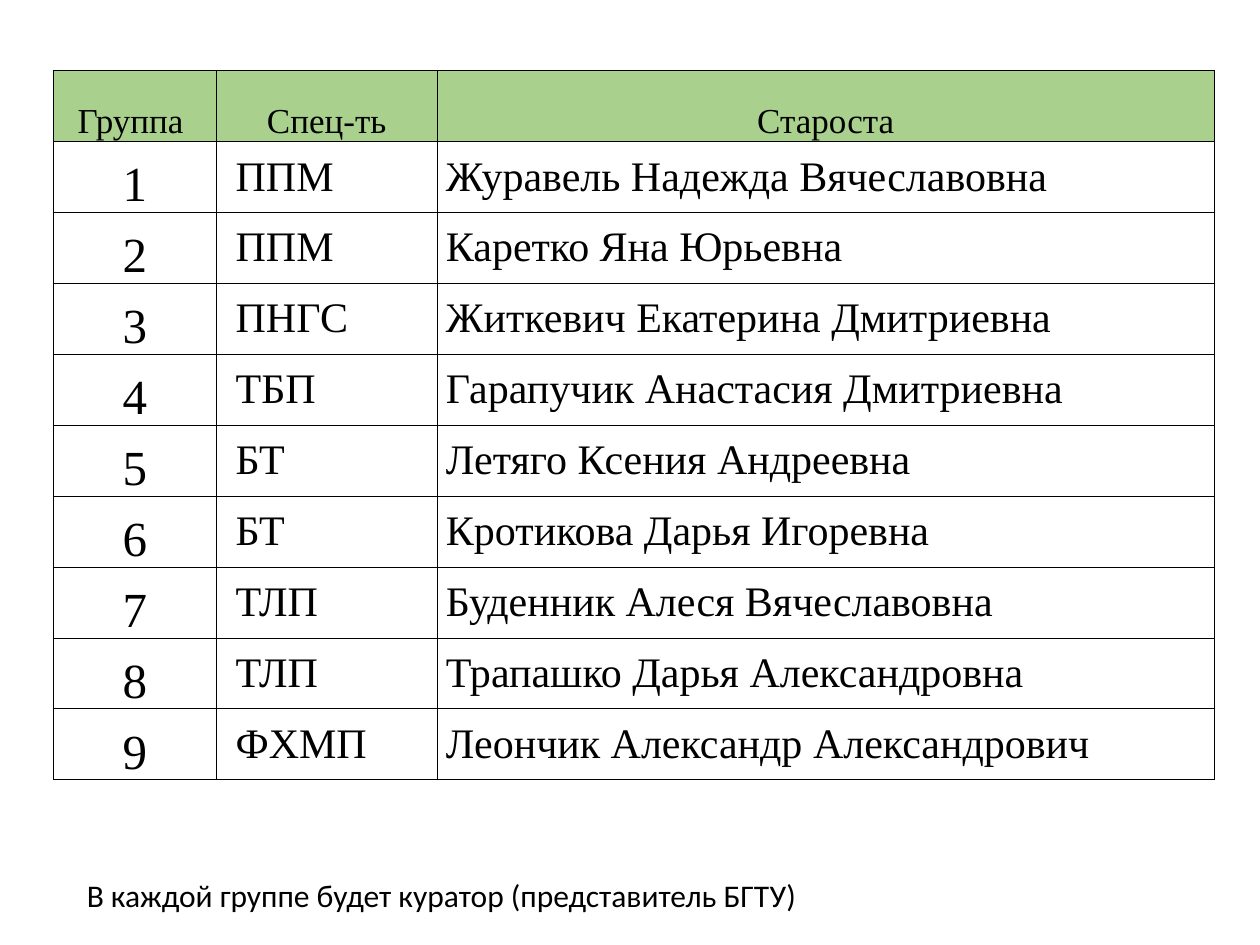
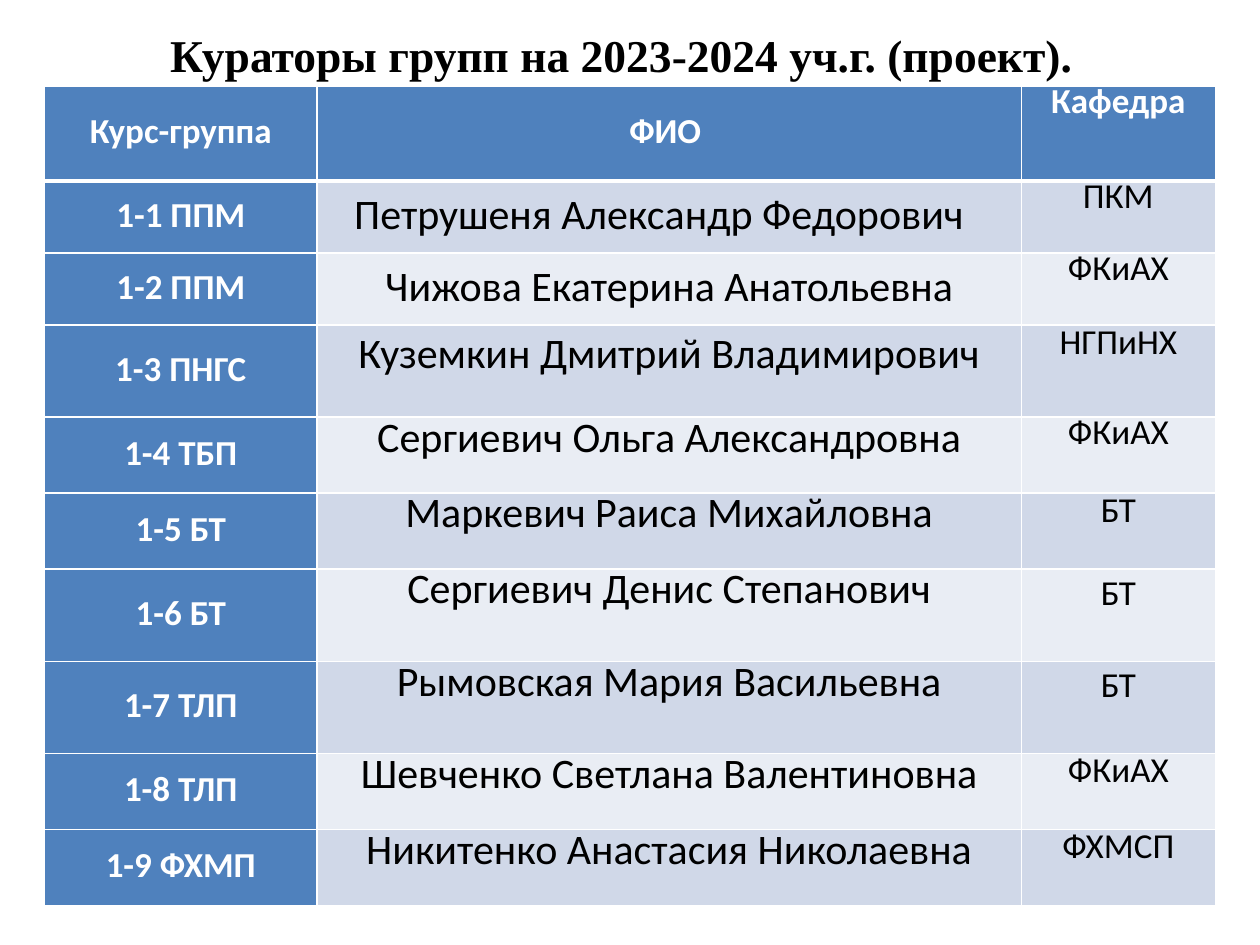
import pptx
import pptx.dml.color
import pptx.enum.text
import pptx.oxml
import pptx.oxml.ns
import pptx.util

Cm = pptx.util.Cm
Pt = pptx.util.Pt
ALIGN = pptx.enum.text.PP_ALIGN
ANCHOR = pptx.enum.text.MSO_ANCHOR

COLORS = {
    "black": "000000",
    "white": "FFFFFF",
    "green": "A9D18D",
    "blue": "4F81BD",
    "band_dark": "D0D8E8",
    "band_light": "E9EDF4",
}
SERIF, SANS = "Times New Roman", "Calibri"


def write(tf, text, size, font, color="black", bold=False, align=ALIGN.LEFT, spacing=None):
    tf.word_wrap = True
    p = tf.paragraphs[0]
    p.text = text
    p.alignment = align
    if spacing:
        p.line_spacing = spacing
    r = p.runs[0]
    r.font.size = Pt(size)
    r.font.name = font
    r.font.bold = bold
    r.font.color.rgb = pptx.dml.color.RGBColor.from_string(COLORS[color])


def style_cell(cell, anchor, margins, fill, line, widths):
    cell.vertical_anchor = anchor
    cell.margin_left, cell.margin_top, cell.margin_right, cell.margin_bottom = map(Cm, margins)
    tcPr = cell._tc.get_or_add_tcPr()
    # Borders come before the fill in the cell properties
    for side, width in zip("LRTB", widths):
        tcPr.append(pptx.oxml.parse_xml(
            f'<a:ln{side} {pptx.oxml.ns.nsdecls("a")} w="{Pt(width)}"><a:solidFill>'
            f'<a:srgbClr val="{COLORS[line]}"/></a:solidFill></a:ln{side}>'))
    if fill:
        cell.fill.solid()
        cell.fill.fore_color.rgb = pptx.dml.color.RGBColor.from_string(COLORS[fill])
    else:
        cell.fill.background()


prs = pptx.Presentation()
prs.slide_width, prs.slide_height = Cm(25.4), Cm(19.05)
blank = prs.slide_layouts[6]

# Group leaders
leaders = [
    ("ППМ", "Журавель Надежда Вячеславовна"),
    ("ППМ", "Каретко Яна Юрьевна"),
    ("ПНГС", "Житкевич Екатерина Дмитриевна"),
    ("ТБП", "Гарапучик Анастасия Дмитриевна"),
    ("БТ", "Летяго Ксения Андреевна"),
    ("БТ", "Кротикова Дарья Игоревна"),
    ("ТЛП", "Буденник Алеся Вячеславовна"),
    ("ТЛП", "Трапашко Дарья Александровна"),
    ("ФХМП", "Леончик Александр Александрович"),
]
rows = [("Группа ", "Спец-ть", "Староста")]
rows += [(str(n), *leader) for n, leader in enumerate(leaders, 1)]

s = prs.slides.add_slide(blank)
table = s.shapes.add_table(len(rows), 3, Cm(1.08), Cm(1.42), Cm(23.4), Cm(14.3)).table
table.first_row = table.horz_banding = False
for column, width in zip(table.columns, (3.28, 4.45, 15.67)):
    column.width = Cm(width)
for i, row in enumerate(rows):
    table.rows[i].height = Cm(1.43)
    for j, text in enumerate(row):
        cell = table.cell(i, j)
        if i == 0 or j == 0:
            anchor, margins, align = ANCHOR.BOTTOM, (0.02, 0.02, 0.02, 0), ALIGN.CENTER
            size = 20 if i == 0 else 28
        else:
            left = 0.39 if j == 1 else 0.18
            anchor, margins, align = ANCHOR.MIDDLE, (left, 0, 0.18, 0), ALIGN.LEFT
            size = 24
        style_cell(cell, anchor, margins, "green" if i == 0 else None, "black", [0.5] * 4)
        write(cell.text_frame, text, size, SERIF, align=align)

# Note under the table
sp = s.shapes.add_textbox(Cm(1.5), Cm(17.53), Cm(22.99), Cm(1.02))
write(sp.text_frame, "В каждой группе будет куратор (представитель БГТУ)", 18, SANS)

# Curators: group, name, department, row height, line spacing of name and department
curators = [
    ("Курс-группа", "ФИО ", "Кафедра", 1.92, 0.8, 0.8),
    ("1-1 ППМ", "Петрушеня Александр Федорович\t", "ПКМ", 1.45, 0.8, 0.8),
    ("1-2 ППМ", "Чижова Екатерина Анатольевна", "ФКиАХ", 1.45, 0.8, 0.8),
    ("1-3 ПНГС", "Куземкин Дмитрий Владимирович", "НГПиНХ", 1.86, 1.07, 0.85),
    ("1-4 ТБП", "Сергиевич Ольга Александровна", "ФКиАХ", 1.53, 0.85, 0.8),
    ("1-5 БТ", "Маркевич Раиса Михайловна", "БТ", 1.53, 0.85, 0.85),
    ("1-6 БТ", "Сергиевич Денис Степанович", "БТ", 1.86, 0.85, 1.07),
    ("1-7 ТЛП", "Рымовская Мария Васильевна", "БТ", 1.86, 0.85, 1.07),
    ("1-8 ТЛП", "Шевченко Светлана Валентиновна", "ФКиАХ", 1.53, 0.85, 0.85),
    ("1-9 ФХМП", "Никитенко Анастасия Николаевна", "ФХМСП", 1.53, 0.85, 0.85),
]
s = prs.slides.add_slide(blank)
table = s.shapes.add_table(len(curators), 3, Cm(0.9), Cm(1.73), Cm(23.6), Cm(16.52)).table
for column, width in zip(table.columns, (5.49, 14.2, 3.91)):
    column.width = Cm(width)
for i, (group, name, department, height, name_gap, department_gap) in enumerate(curators):
    table.rows[i].height = Cm(height)
    band = "band_dark" if i % 2 else "band_light"
    widths = (1, 1, 3 if i == 1 else 1, 3 if i == 0 else 1)
    gaps = (0.8, name_gap, department_gap)
    for j, text in enumerate((group, name, department)):
        cell = table.cell(i, j)
        heading = i == 0 or j == 0
        middle = j == 0 or (j == 1 and i < 3)
        style_cell(cell, ANCHOR.MIDDLE if middle else ANCHOR.TOP, (0.18, 0, 0.18, 0),
                   "blue" if heading else band, "white", widths)
        write(cell.text_frame, text, 24 if j == 1 and i else 20, SANS,
              "white" if heading else "black", heading, ALIGN.CENTER, gaps[j])

# Title
sp = s.shapes.add_textbox(Cm(3.18), Cm(0.43), Cm(20.5), Cm(1.27))
write(sp.text_frame, "Кураторы групп на 2023-2024 уч.г. (проект).", 26, SERIF, bold=True)

prs.save("out.pptx")
